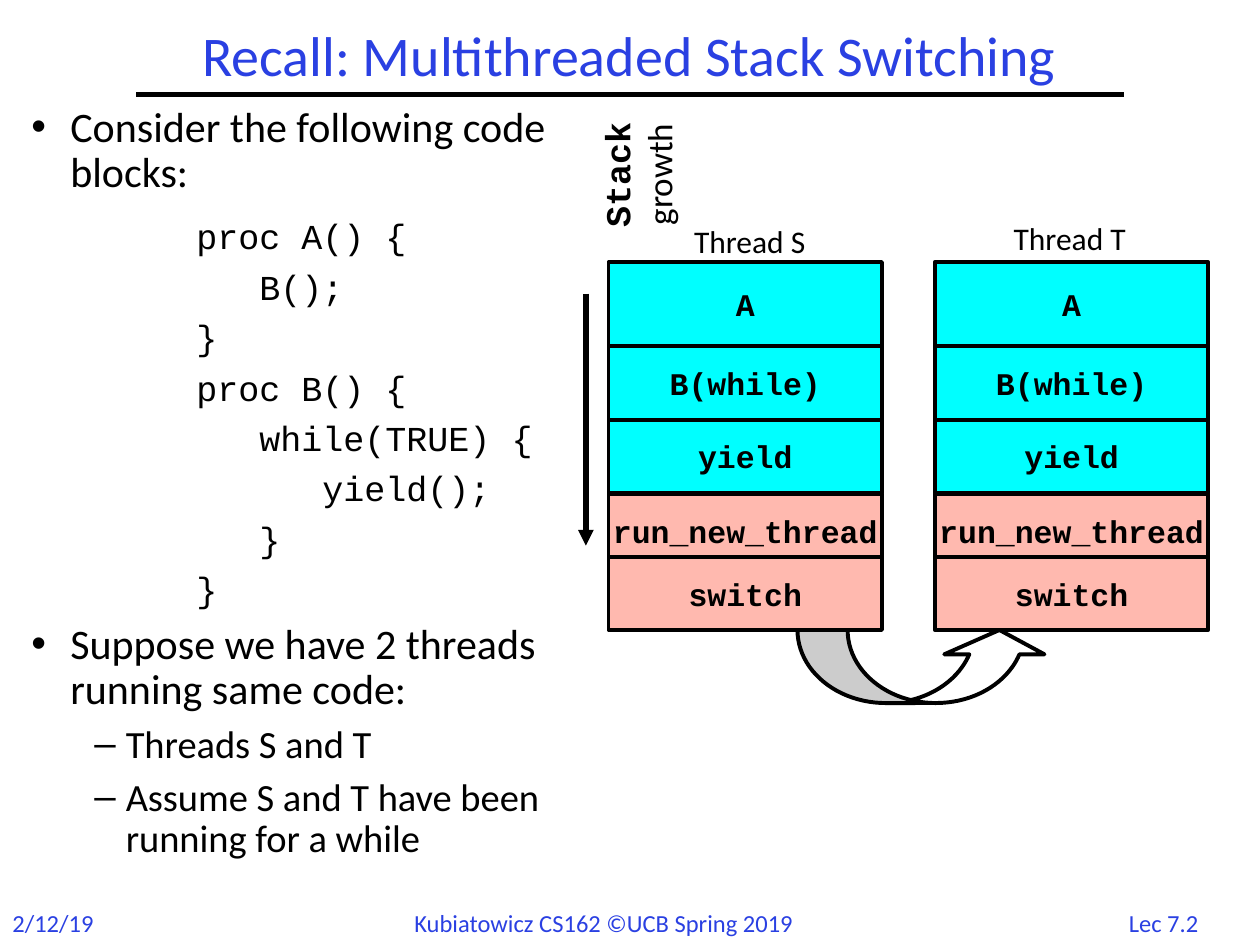
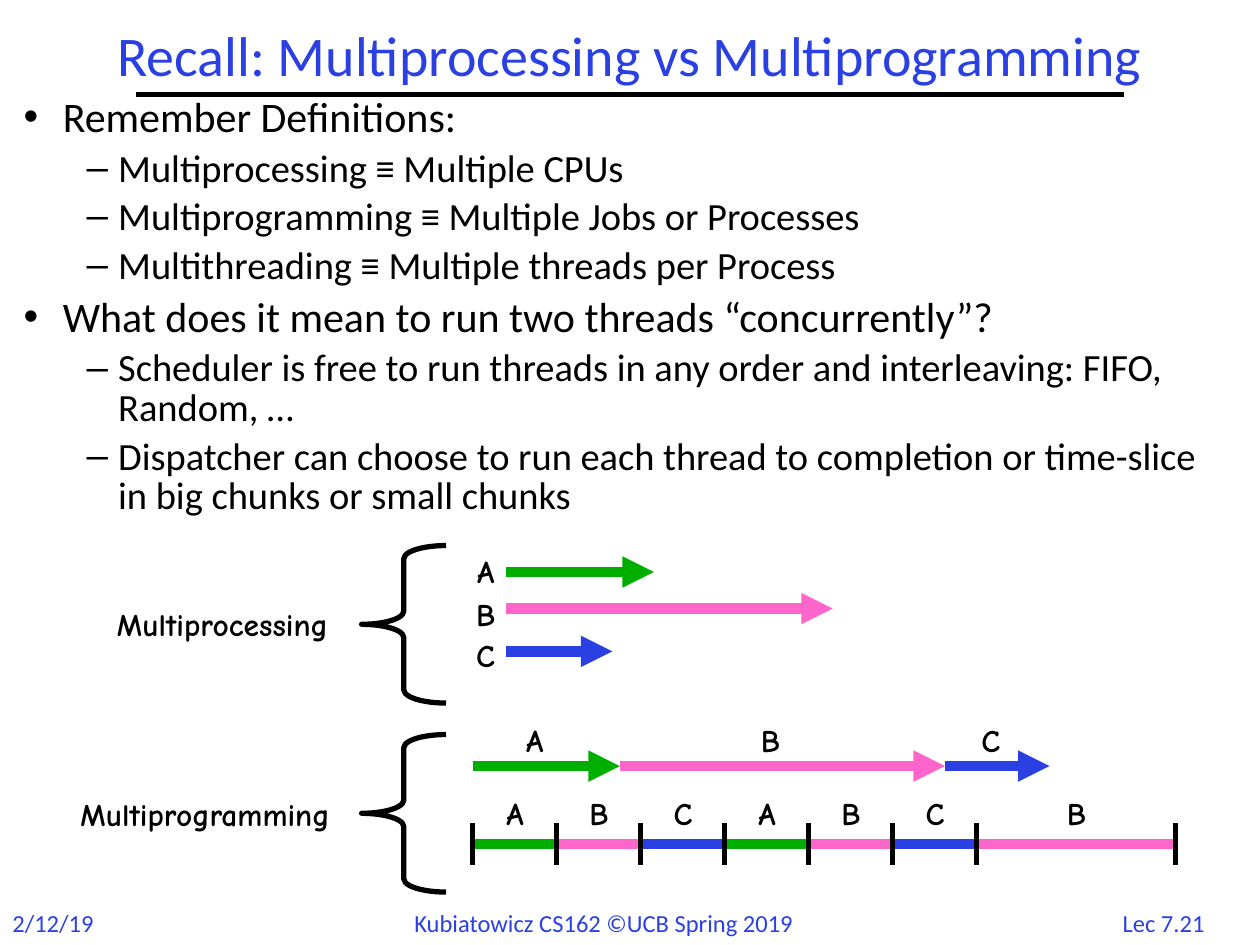
"""Build two lecture slides on stack switching and on multiprocessing versus multiprogramming."""
from itertools import accumulate

from lxml import etree
from pptx import Presentation
from pptx.dml.color import RGBColor
from pptx.enum.shapes import MSO_CONNECTOR, MSO_SHAPE
from pptx.enum.text import MSO_ANCHOR, PP_ALIGN
from pptx.oxml.ns import qn
from pptx.util import Inches, Pt

LEFT, CENTER = PP_ALIGN.LEFT, PP_ALIGN.CENTER
TOP, MIDDLE = MSO_ANCHOR.TOP, MSO_ANCHOR.MIDDLE
STRAIGHT = MSO_CONNECTOR.STRAIGHT
RECTANGLE, BRACE = MSO_SHAPE.RECTANGLE, MSO_SHAPE.LEFT_BRACE
SWITCH_ARROW = MSO_SHAPE.CURVED_UP_ARROW

COLORS = {
    "heading": "2A40E2", "ink": "000000", "paper": "FFFFFF",
    "user": "00FFFF", "kernel": "FFB9AF",
    "A": "00AE00", "B": "FF66CC", "C": "2A40E2",
}
SANS, CODE, COMIC = "Calibri", "Courier New", "Comic Neue"

DATE = "2/12/19"
CREDIT = "Kubiatowicz CS162 ©UCB Spring 2019"

SWITCHING = {
    "title": "Recall: Multithreaded Stack Switching",
    "title_box": (1.08, 0.17, 7.83, 0.58),
    "number": "Lec 7.2",
    "body_box": (0.15, 0.79, 4.73, 6.25),
    "line_spacing": 0.9,
    "gap": 0.3,
    "body": [
        ("point", "Consider the following code blocks:"),
        ("code", "proc A() {", 0),
        ("code", "B();", 1),
        ("code", "}", 0),
        ("code", "proc B() {", 0),
        ("code", "while(TRUE) {", 1),
        ("code", "yield();", 2),
        ("code", "}", 1),
        ("code", "}", 0),
        ("point", "Suppose we have 2 threads running same code:"),
        ("detail", "Threads S and T"),
        ("detail", "Assume S and T have been running for a while"),
    ],
}
CONCURRENCY = {
    "title": "Recall: Multiprocessing vs Multiprogramming",
    "title_box": (0.39, 0.17, 9.22, 0.58),
    "number": "Lec 7.21",
    "body_box": (0.09, 0.73, 9.53, 3.73),
    "line_spacing": 0.85,
    "gap": 0.25,
    "body": [
        ("point", "Remember Definitions:"),
        ("detail", "Multiprocessing ≡ Multiple CPUs"),
        ("detail", "Multiprogramming ≡ Multiple Jobs or Processes"),
        ("detail", "Multithreading ≡ Multiple threads per Process"),
        ("point", "What does it mean to run two threads “concurrently”?"),
        ("detail", "Scheduler is free to run threads in any order and interleaving: "
                   "FIFO, Random, …"),
        ("detail", "Dispatcher can choose to run each thread to completion or "
                   "time-slice in big chunks or small chunks"),
    ],
}

# kind: size, font, left margin, first-line indent, bullet
BODY_STYLES = {
    "point": (24, SANS, 0.31, -0.31, "•"),
    "detail": (22, SANS, 0.75, -0.25, "–"),
    "code": (20, CODE, 1.31, 0, None),
}
CODE_STEP = 0.5
POINT_SIZE = 24

THREADS = [("Thread S", 4.83, 5.39, 1.71), ("Thread T", 7.42, 7.93, 1.69)]
FRAMES = [
    ("A", "user", 2.08, 0.67),
    ("B(while)", "user", 2.75, 0.58),
    ("yield", "user", 3.33, 0.58),
    ("run_new_thread", "kernel", 3.92, 0.58),
    ("switch", "kernel", 4.42, 0.58),
]
FRAME_WIDTH = 2.17

PARALLEL = [("A", 1.17, 4.33, 4.54), ("B", 2.59, 4.67, 4.83), ("C", 0.84, 5.0, 5.17)]
SEQUENTIAL = [("A", 1.17, 4.06), ("B", 2.58, 5.93), ("C", 0.83, 7.68)]
SLICES = [(job, 2 / 3) for job in "ABCABC"] + [("B", 1.58)]
MODES = [("Multiprocessing", 0.83, 4.75, 2.04, 4.33),
         ("Multiprogramming", 0.54, 6.26, 2.3, 5.83)]
PARALLEL_LEFT, TIME_LEFT = 4.02, 3.75
SEQUENTIAL_Y, SLICE_Y, TICK_HALF = 6.08, 6.7, 0.165


def rgb(name):
    return RGBColor.from_string(COLORS[name])


def box(values):
    return [Inches(value) for value in values]


def style_paragraph(paragraph, size, font, color="ink", bold=False, align=LEFT):
    paragraph.alignment = align
    for run in paragraph.runs:
        run.font.size, run.font.name, run.font.bold = Pt(size), font, bold
        run.font.color.rgb = rgb(color)


def add_text(slide, area, text, size, font, color="ink", bold=False,
             align=LEFT, anchor=TOP, wrap=False):
    label = slide.shapes.add_textbox(*box(area))
    frame = label.text_frame
    frame.word_wrap, frame.vertical_anchor = wrap, anchor
    frame.text = text
    style_paragraph(frame.paragraphs[0], size, font, color, bold, align)
    return label


def add_line(slide, start, end, color="ink", width=3, arrow=False):
    line = slide.shapes.add_connector(STRAIGHT, *box(start + end))
    line.line.color.rgb, line.line.width = rgb(color), Pt(width)
    properties = line._element.spPr
    if arrow:
        etree.SubElement(properties.find(qn("a:ln")), qn("a:tailEnd"), type="triangle")
    etree.SubElement(properties, qn("a:effectLst"))


def add_outline(slide, kind, area, width, fill=None, adjustments=()):
    outline = slide.shapes.add_shape(kind, *box(area))
    outline.shadow.inherit = False
    outline.line.color.rgb, outline.line.width = rgb("ink"), Pt(width)
    if fill:
        outline.fill.solid()
        outline.fill.fore_color.rgb = rgb(fill)
    else:
        outline.fill.background()
    for index, value in enumerate(adjustments):
        outline.adjustments[index] = value
    return outline


def add_body(slide, lecture):
    frame = slide.shapes.add_textbox(*box(lecture["body_box"])).text_frame
    frame.word_wrap = True
    previous = None
    for kind, text, *depth in lecture["body"]:
        size, font, margin, indent, bullet = BODY_STYLES[kind]
        paragraph = frame.add_paragraph() if previous else frame.paragraphs[0]
        paragraph.text = text
        style_paragraph(paragraph, size, font)
        paragraph.line_spacing = lecture["line_spacing"]
        gap = lecture["gap"] * (POINT_SIZE if kind == "code" else size)
        if kind == "code" and previous == "point":
            gap += 6
        paragraph.space_before = Pt(gap if previous else 0)
        properties = paragraph._p.get_or_add_pPr()
        properties.set("marL", str(Inches(margin + CODE_STEP * sum(depth))))
        properties.set("indent", str(Inches(indent)))
        if bullet:
            etree.SubElement(properties, qn("a:buFont"), typeface="Arial")
            etree.SubElement(properties, qn("a:buChar"), char=bullet)
        else:
            etree.SubElement(properties, qn("a:buNone"))
        previous = kind


def add_lecture_slide(deck, lecture):
    slide = deck.slides.add_slide(deck.slide_layouts[6])
    add_text(slide, (8.78, 7.16, 0.91, 0.33), lecture["number"], 14, SANS, "heading",
             align=CENTER)
    add_text(slide, (0, 7.16, 0.85, 0.34), DATE, 14, SANS, "heading")
    add_text(slide, (3.19, 7.16, 3.63, 0.34), CREDIT, 14, SANS, "heading")
    add_line(slide, (1.08, 0.75), (8.92, 0.75))
    title = add_text(slide, lecture["title_box"], lecture["title"], 32, SANS, "heading",
                     align=CENTER, anchor=MIDDLE, wrap=True)
    title.text_frame.paragraphs[0].line_spacing = 0.9
    add_body(slide, lecture)
    return slide


def add_stacks(slide):
    add_outline(slide, SWITCH_ARROW, (6.33, 5, 2, 0.58), 2.25, "paper",
                (0.686, 1.371, 0.333))
    growth = add_text(slide, (4.55, 0.96, 1.1, 0.85), "Stack ", 20, CODE, bold=True,
                      align=CENTER, wrap=True)
    word = growth.text_frame.paragraphs[0].add_run()
    word.text = "growth"
    word.font.size, word.font.name, word.font.color.rgb = Pt(20), SANS, rgb("ink")
    growth.rotation = 270
    add_line(slide, (4.65, 2.33), (4.65, 4.33), arrow=True)
    for thread, left, label_left, label_top in THREADS:
        add_text(slide, (label_left, label_top, 1.12, 0.4), thread, 18, SANS, align=CENTER)
        for call, space, top, height in FRAMES:
            frame = add_outline(slide, RECTANGLE, (left, top, FRAME_WIDTH, height),
                                2.25, space).text_frame
            frame.word_wrap, frame.vertical_anchor = False, MIDDLE
            frame.text = call
            style_paragraph(frame.paragraphs[0], 18, CODE, bold=True, align=CENTER)


def add_job_label(slide, job, left, top):
    add_text(slide, (left, top, 0.37, 0.4), job, 18, COMIC, bold=True, align=CENTER)


def add_schedules(slide):
    for mode, left, top, width, brace_top in MODES:
        add_text(slide, (left, top, width, 0.4), mode, 18, COMIC, bold=True)
        add_outline(slide, BRACE, (2.87, brace_top, 0.67, 1.25), 3,
                    adjustments=(0.156, 0.5))
    for job, length, label_top, y in PARALLEL:
        add_job_label(slide, job, 3.67, label_top)
        add_line(slide, (PARALLEL_LEFT, y), (PARALLEL_LEFT + length, y), job, 6, True)
    start = TIME_LEFT
    for job, length, label_left in SEQUENTIAL:
        add_line(slide, (start, SEQUENTIAL_Y), (start + length, SEQUENTIAL_Y), job, 6, True)
        add_job_label(slide, job, label_left, 5.67)
        start += length
    ticks = list(accumulate((length for _, length in SLICES), initial=TIME_LEFT))
    for (job, _), start, end in zip(SLICES, ticks, ticks[1:]):
        add_line(slide, (start, SLICE_Y), (end, SLICE_Y), job, 6)
        add_job_label(slide, job, (start + end) / 2 - 0.18, 6.25)
    for x in ticks:
        add_line(slide, (x, SLICE_Y - TICK_HALF), (x, SLICE_Y + TICK_HALF))


def main():
    deck = Presentation()
    deck.slide_width, deck.slide_height = Inches(10), Inches(7.5)
    add_stacks(add_lecture_slide(deck, SWITCHING))
    add_schedules(add_lecture_slide(deck, CONCURRENCY))
    deck.save("out.pptx")


if __name__ == "__main__":
    main()
